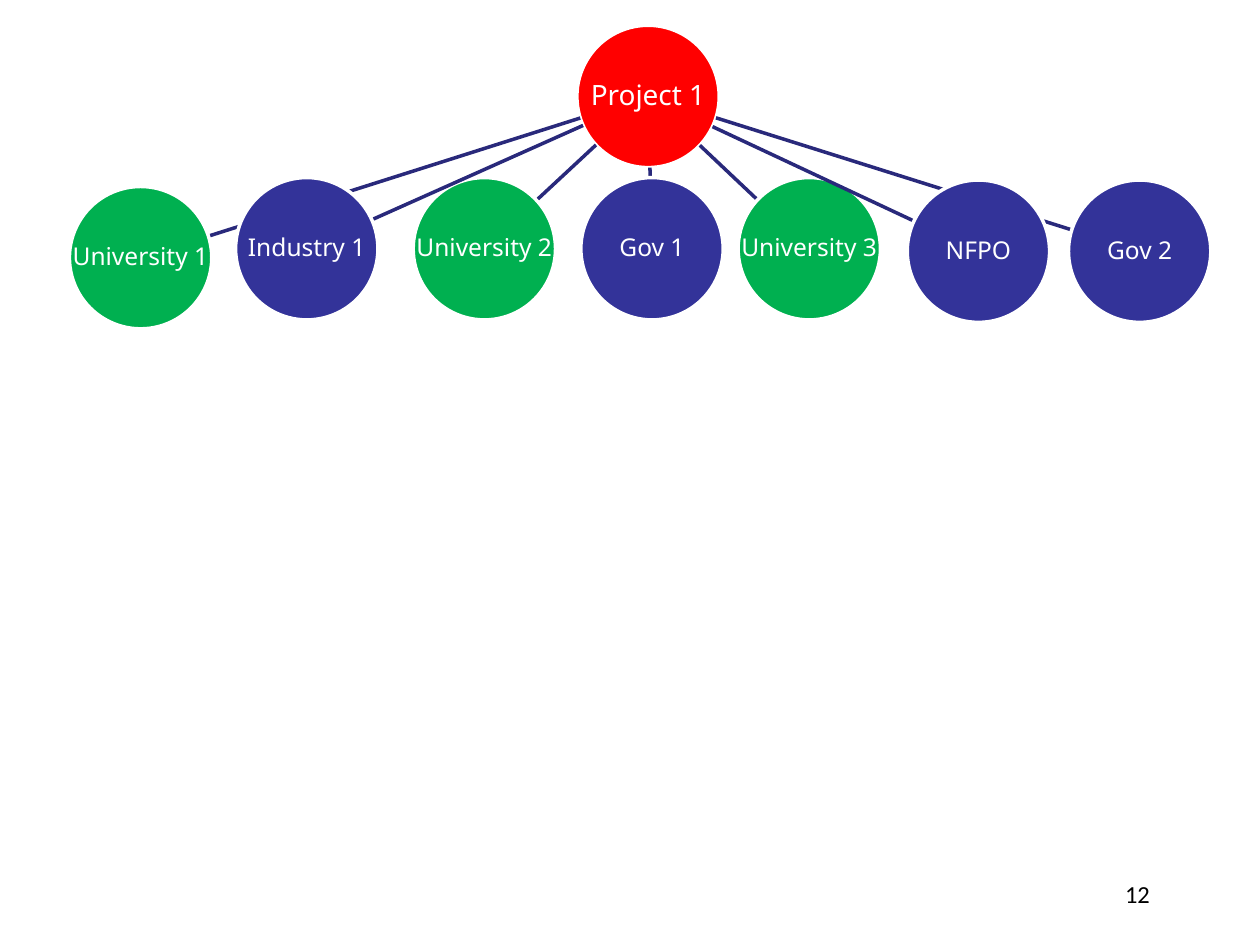
"""Build a slide with one project linked to its seven partner organisations."""
from dataclasses import dataclass
from math import hypot

from lxml import etree
from pptx import Presentation
from pptx import util as u
from pptx.dml.color import RGBColor
from pptx.enum import shapes, text
from pptx.oxml.ns import qn

RED = RGBColor(0xFF, 0x00, 0x00)
GREEN = RGBColor(0x00, 0xB0, 0x50)
BLUE = RGBColor(0x33, 0x33, 0x99)
NAVY = RGBColor(0x29, 0x29, 0x7B)
WHITE = RGBColor(0xFF, 0xFF, 0xFF)
BLACK = RGBColor(0x00, 0x00, 0x00)
DIAMETER = 2.87


@dataclass(frozen=True)
class Node:
    label: str
    left: float
    top: float
    color: RGBColor
    size: int = 14

    @property
    def center(self) -> tuple[float, float]:
        return self.left + DIAMETER / 2, self.top + DIAMETER / 2


HUB = Node("Project 1", 11.63, 0.51, RED, 16)
PARTNERS = [
    Node("University 1", 1.4, 3.76, GREEN),
    Node("University 2", 8.33, 3.58, GREEN),
    Node("University 3", 14.88, 3.58, GREEN),
    Node("Gov 1", 11.71, 3.58, BLUE),
    Node("Gov 2", 21.54, 3.63, BLUE),
    Node("Industry 1", 4.75, 3.58, BLUE),
    Node("NFPO", 18.29, 3.63, BLUE),
]


def format_run(p, font: str, size: int, color: RGBColor) -> None:
    r = p.runs[0]
    r.font.name = font
    r.font.size = u.Pt(size)
    r.font.color.rgb = color


def add_node(s, node: Node) -> None:
    sp = s.shapes.add_shape(shapes.MSO_SHAPE.OVAL, u.Cm(node.left), u.Cm(node.top),
                            u.Cm(DIAMETER), u.Cm(DIAMETER))
    sp.shadow.inherit = False
    sp.fill.solid()
    sp.fill.fore_color.rgb = node.color
    sp.line.color.rgb = WHITE
    sp.line.width = u.Pt(2)
    tf = sp.text_frame
    tf.text = node.label
    tf.word_wrap = False
    tf.vertical_anchor = text.MSO_ANCHOR.MIDDLE
    tf.margin_left = tf.margin_right = tf.margin_top = tf.margin_bottom = u.Cm(0.03)
    p = tf.paragraphs[0]
    p.alignment = text.PP_ALIGN.CENTER
    p.line_spacing = 0.9
    p.space_after = u.Pt(0.35 * node.size)
    format_run(p, "Noto Sans", node.size, WHITE)


def add_link(s, start: Node, end: Node) -> None:
    (x1, y1), (x2, y2) = start.center, end.center
    trim = DIAMETER / 2 / hypot(x2 - x1, y2 - y1)
    dx, dy = (x2 - x1) * trim, (y2 - y1) * trim
    link = s.shapes.add_connector(shapes.MSO_CONNECTOR.STRAIGHT, u.Cm(x1 + dx), u.Cm(y1 + dy),
                                  u.Cm(x2 - dx), u.Cm(y2 - dy))
    link.line.color.rgb = NAVY
    link.line.width = u.Pt(2)
    etree.SubElement(link._element.spPr, qn("a:effectLst"))


def add_page_number(s, number: int) -> None:
    sp = s.shapes.add_textbox(u.Cm(22.43), u.Cm(17.6), u.Cm(1.98), u.Cm(0.86))
    tf = sp.text_frame
    tf.text = str(number)
    tf.word_wrap = True
    format_run(tf.paragraphs[0], "Calibri", 14, BLACK)


def main() -> None:
    prs = Presentation()
    prs.slide_width, prs.slide_height = u.Cm(25.4), u.Cm(19.05)
    s = prs.slides.add_slide(prs.slide_layouts.get_by_name("Blank"))
    add_page_number(s, 12)
    add_node(s, HUB)
    for partner in PARTNERS:
        add_link(s, HUB, partner)
        add_node(s, partner)
    prs.save("out.pptx")


if __name__ == "__main__":
    main()
